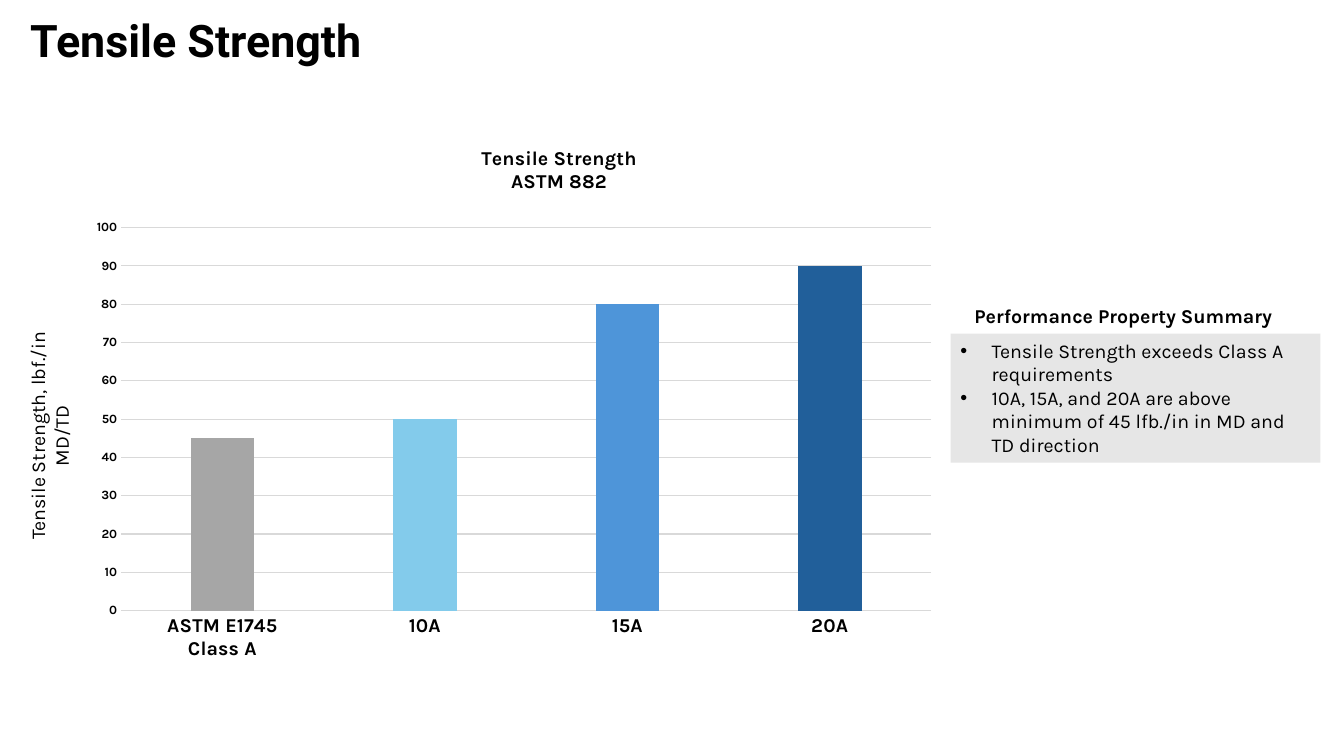
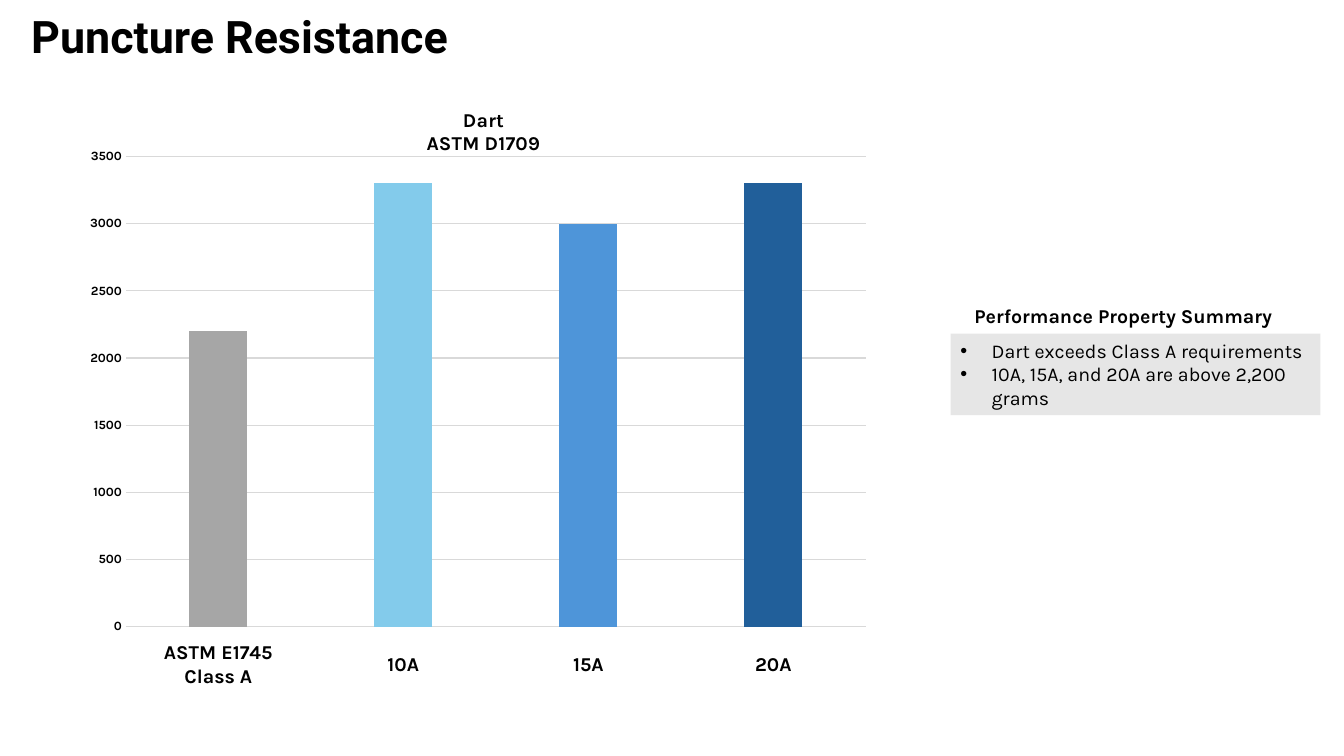
import pptx
import pptx.util
import pptx.chart.data
import pptx.dml.color
import pptx.enum.chart
import pptx.enum.shapes
import pptx.enum.text
import pptx.oxml
import pptx.oxml.ns

Pt = pptx.util.Pt
ALIGN = pptx.enum.text.PP_ALIGN
ANCHOR = pptx.enum.text.MSO_ANCHOR

COLORS = {
    "text": "000000",
    "grid": "D9D9D9",
    "panel": "E6E6E6",
    "class_a": "A6A6A6",
    "10A": "83CBEB",
    "15A": "4E95D9",
    "20A": "215F9A",
}
BAR_COLORS = ["class_a", "10A", "15A", "20A"]
CATEGORIES = ["ASTM E1745\nClass A", "10A", "15A", "20A"]
TITLE_FONT, BODY_FONT = "Roboto", "Karla"
SUMMARY_HEADING = "Performance Property Summary"


def grid(*steps):
    """Turn grid steps (ten to the inch) into lengths."""
    return [pptx.util.Inches(step / 10) for step in steps]


def rgb(name):
    return pptx.dml.color.RGBColor.from_string(COLORS[name])


def style(font, size, bold=False, name=BODY_FONT):
    font.size, font.bold, font.name = Pt(size), bold, name
    font.color.rgb = rgb("text")


def write(tf, lines, size=14, bold=False, align=ALIGN.CENTER, name=BODY_FONT):
    for i, line in enumerate(lines):
        p = tf.paragraphs[0] if i == 0 else tf.add_paragraph()
        p.alignment = align
        r = p.add_run()
        r.text = line
        style(r.font, size, bold, name)


def add_text(s, box, lines, bold=False, anchor=ANCHOR.TOP):
    sp = s.shapes.add_textbox(*grid(*box))
    tf = sp.text_frame
    tf.word_wrap = True
    tf.vertical_anchor = anchor
    write(tf, lines, bold=bold)
    return sp


def add_bullet(p):
    pPr = p._p.get_or_add_pPr()
    indent = pptx.util.Inches(0.31)
    pPr.set("marL", str(indent))
    pPr.set("indent", str(-indent))
    for tag, key, value in (("buFont", "typeface", "Arial"), ("buChar", "char", "•")):
        pPr.append(pptx.oxml.parse_xml(
            f'<a:{tag} {pptx.oxml.ns.nsdecls("a")} {key}="{value}"/>'))


def set_layout(parent, successors, **shares):
    """Place a chart part by shares of the chart's size."""
    for old in parent.findall(pptx.oxml.ns.qn("c:layout")):
        parent.remove(old)
    target = '<c:layoutTarget val="inner"/>' if "w" in shares else ""
    values = "".join(f'<c:{key} val="{share}"/>' for key, share in shares.items())
    layout = pptx.oxml.parse_xml(
        f'<c:layout {pptx.oxml.ns.nsdecls("c")}><c:manualLayout>{target}'
        f'<c:xMode val="edge"/><c:yMode val="edge"/>{values}'
        '</c:manualLayout></c:layout>')
    parent.insert_element_before(layout, *successors)


def add_title(s, box, text):
    sp = s.shapes.title
    sp.left, sp.top, sp.width, sp.height = grid(*box)
    tf = sp.text_frame
    tf.word_wrap = True
    tf.auto_size = pptx.enum.text.MSO_AUTO_SIZE.NONE
    tf.vertical_anchor = ANCHOR.TOP
    write(tf, [text], 32, True, ALIGN.LEFT, TITLE_FONT)
    tf.paragraphs[0].line_spacing = 0.9


def style_axes(chart, top, unit, show_categories):
    cat, val = chart.category_axis, chart.value_axis
    for axis, size in ((cat, 14), (val, 9)):
        axis.major_tick_mark = axis.minor_tick_mark = pptx.enum.chart.XL_TICK_MARK.NONE
        style(axis.tick_labels.font, size, True)
    cat.visible = show_categories
    val.minimum_scale, val.maximum_scale, val.major_unit = 0, top, unit
    val.tick_labels.number_format = "0"
    val.tick_labels.number_format_is_linked = False
    val.format.line.fill.background()
    for line in (cat.format.line, val.major_gridlines.format.line):
        line.color.rgb = rgb("grid")
        line.width = Pt(0.75)


def add_bar_chart(s, box, title, title_at, plot, values, top, unit, show_categories=True):
    data = pptx.chart.data.CategoryChartData()
    data.categories = CATEGORIES
    data.add_series("Series 1", values)
    chart = s.shapes.add_chart(
        pptx.enum.chart.XL_CHART_TYPE.COLUMN_CLUSTERED, *grid(*box), data).chart
    chart.has_legend = False
    style(chart.font, 10, True)
    chart.has_title = True
    chart.chart_title.include_in_layout = False
    write(chart.chart_title.text_frame, title, bold=True)
    set_layout(chart.chart_title._element, ("c:overlay", "c:spPr", "c:txPr"),
               **dict(zip("xy", title_at)))
    plot_area = chart._chartSpace.chart.plotArea
    set_layout(plot_area, ("c:barChart",), **dict(zip("xywh", plot)))
    style_axes(chart, top, unit, show_categories)
    bars = chart.plots[0]
    bars.vary_by_categories = False
    bars.gap_width, bars.overlap = 219, -27
    for i, name in enumerate(BAR_COLORS):
        fill = bars.series[0].points[i].format.fill
        fill.solid()
        fill.fore_color.rgb = rgb(name)


def add_category_row(s, box):
    """Centre one label under each bar, in equal columns."""
    left, top, width, height = box
    step = width / len(CATEGORIES)
    for i, label in enumerate(CATEGORIES):
        add_text(s, (left + i * step, top, step, height), label.split("\n"),
                 True, ANCHOR.MIDDLE)


def add_summary(s, box, points):
    left, top, width, height = box
    heading_height = 3.4
    panel = s.shapes.add_shape(pptx.enum.shapes.MSO_SHAPE.RECTANGLE, *grid(*box))
    panel.shadow.inherit = False
    panel.fill.solid()
    panel.fill.fore_color.rgb = rgb("panel")
    panel.line.fill.background()
    tf = panel.text_frame
    tf.word_wrap = True
    tf.vertical_anchor = ANCHOR.TOP
    write(tf, points, align=ALIGN.LEFT)
    for p in tf.paragraphs:
        add_bullet(p)
    add_text(s, (left - 1.2, top - heading_height, width, heading_height),
             [SUMMARY_HEADING], True)


def tensile_slide(s):
    add_title(s, (2, 1.4, 126.2, 8), "Tensile Strength")
    add_bar_chart(s, (7.7, 13.6, 86.4, 52.8), ["Tensile Strength", "ASTM 882"],
                  (0.46, 0.01), (0.05, 0.17, 0.93, 0.72), [45, 50, 80, 90], 100, 10)
    label = add_text(s, (-15, 40.4, 39.8, 5.7), ["Tensile Strength, lbf./in", "MD/TD"])
    label.rotation = 270
    add_summary(s, (94.3, 33.1, 36.7, 12.8), [
        "Tensile Strength exceeds Class A requirements",
        "10A, 15A, and 20A are above minimum of 45 lfb./in in MD and TD direction"])


def puncture_slide(s):
    add_title(s, (2.1, 1, 126.2, 8), "Puncture Resistance")
    left, top, width, height = box = (7.7, 10.4, 79.8, 56.9)
    plot = (0.06, 0.09, 0.92, 0.82)
    add_bar_chart(s, box, ["Dart", "ASTM D1709"], (0.43, 0), plot,
                  [2200, 3300, 3000, 3300], 3500, 500, show_categories=False)
    add_category_row(s, (left + plot[0] * width, 63, plot[2] * width, 5.7))
    add_summary(s, (94.3, 33.1, 36.7, 8.1), [
        "Dart exceeds Class A requirements",
        "10A, 15A, and 20A are above 2,200 grams"])


def main():
    prs = pptx.Presentation()
    prs.slide_width, prs.slide_height = grid(133.33, 75)
    title_only = prs.slide_layouts[5]
    for build in (tensile_slide, puncture_slide):
        build(prs.slides.add_slide(title_only))
    prs.save("out.pptx")


if __name__ == "__main__":
    main()
